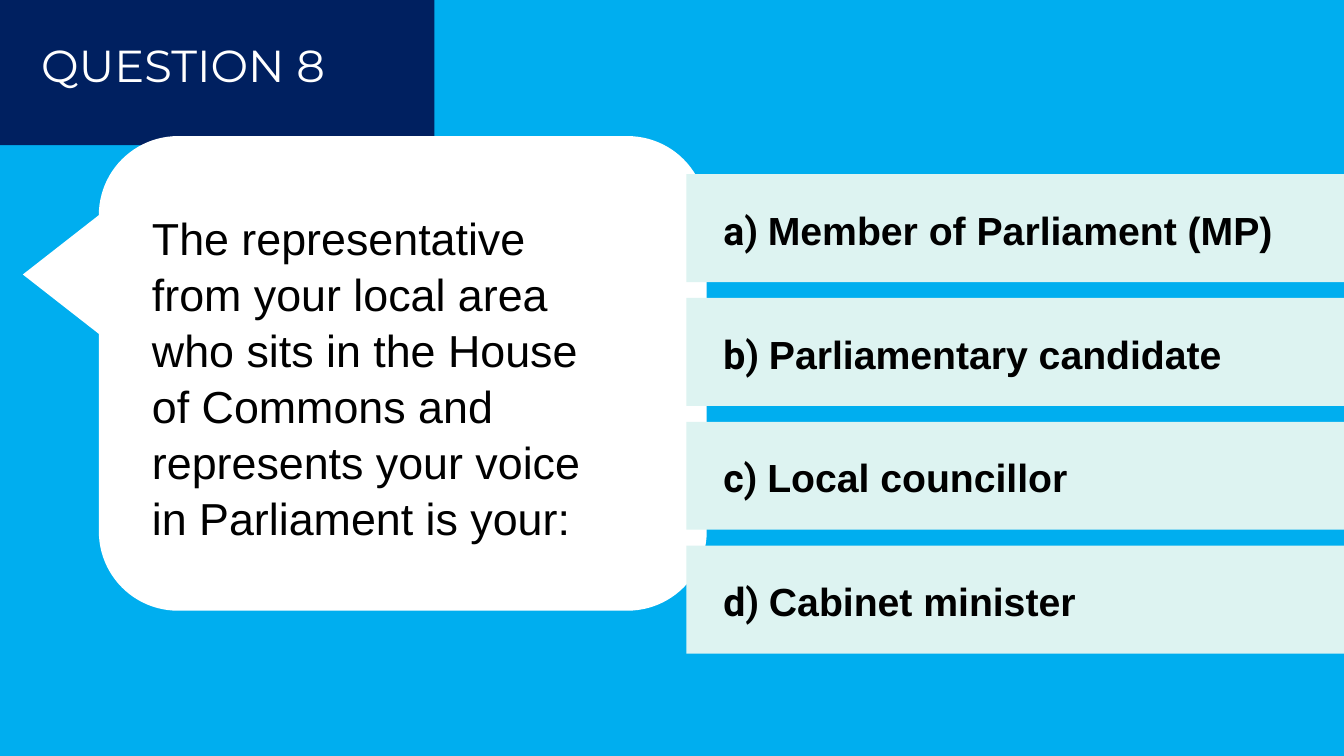
from pptx import Presentation
from pptx.dml.color import RGBColor
from pptx.enum.shapes import MSO_SHAPE
from pptx.util import Cm, Pt

RECT = MSO_SHAPE.RECTANGLE
CALLOUT = MSO_SHAPE.ROUNDED_RECTANGULAR_CALLOUT
SKY, NAVY, MINT, WHITE, BLACK = "00AEEF", "002060", "DDF3F1", "FFFFFF", "000000"
QUESTION = (
    "The representative\vfrom your local area who sits in the House\v"
    "of Commons and\vrepresents your voice\vin Parliament is your:"
)
ANSWERS = [
    "Member of Parliament (MP)",
    "Parliamentary candidate",
    "Local councillor",
    "Cabinet minister",
]


def rgb(value):
    return RGBColor.from_string(value)


class QuizSlide:
    """Draws quiz elements on one slide, with lengths in centimetres."""

    def __init__(self, prs, background):
        self.s = prs.slides.add_slide(prs.slide_layouts[6])
        fill = self.s.background.fill
        fill.solid()
        fill.fore_color.rgb = rgb(background)

    def shape(self, kind, x, y, w, h, color, rotation=0):
        sp = self.s.shapes.add_shape(kind, Cm(x), Cm(y), Cm(w), Cm(h))
        sp.shadow.inherit = False
        sp.fill.solid()
        sp.fill.fore_color.rgb = rgb(color)
        sp.line.fill.background()
        sp.rotation = rotation

    def text(self, x, y, w, h, parts, size, color=BLACK, bold=False, spacing=1.0, inset=None):
        tf = self.s.shapes.add_textbox(Cm(x), Cm(y), Cm(w), Cm(h)).text_frame
        tf.word_wrap = True
        if inset is not None:
            tf.margin_left = tf.margin_right = Cm(inset)
            tf.margin_top = tf.margin_bottom = Cm(inset)
        p = tf.paragraphs[0]
        p.line_spacing = spacing
        for content, font in parts:
            first = len(p.runs)
            if "\v" in content:
                p.text = content
            else:
                p.add_run().text = content
            for r in p.runs[first:]:
                r.font.name = font
                r.font.size = Pt(size)
                r.font.bold = bold
                r.font.color.rgb = rgb(color)

    def answer(self, index, content):
        x, y = 17.3, 4.39 + 3.12 * index
        self.shape(RECT, x, y, 16.57, 2.72, MINT)
        parts = [("abcd"[index] + ") ", "Roboto"), (content, "Arial")]
        self.text(x + 0.68, y + 0.68, 15.8, 1.45, parts, 28, bold=True)


def main():
    prs = Presentation()
    prs.slide_width, prs.slide_height = Cm(33.87), Cm(19.05)
    quiz = QuizSlide(prs, SKY)
    quiz.shape(RECT, 0, 0, 10.95, 3.66, NAVY)
    quiz.text(0.74, 0.81, 10.21, 1.88, [("QUESTION 8", "Montserrat")], 32,
              color=WHITE, spacing=0.9, inset=0.3)
    quiz.shape(CALLOUT, 4.17, 1.75, 11.96, 15.32, WHITE, rotation=90)
    quiz.text(3.58, 5.14, 12.75, 8.46, [(QUESTION, "Arial")], 32, spacing=1.04)
    for index, content in enumerate(ANSWERS):
        quiz.answer(index, content)
    prs.save("out.pptx")


if __name__ == "__main__":
    main()
